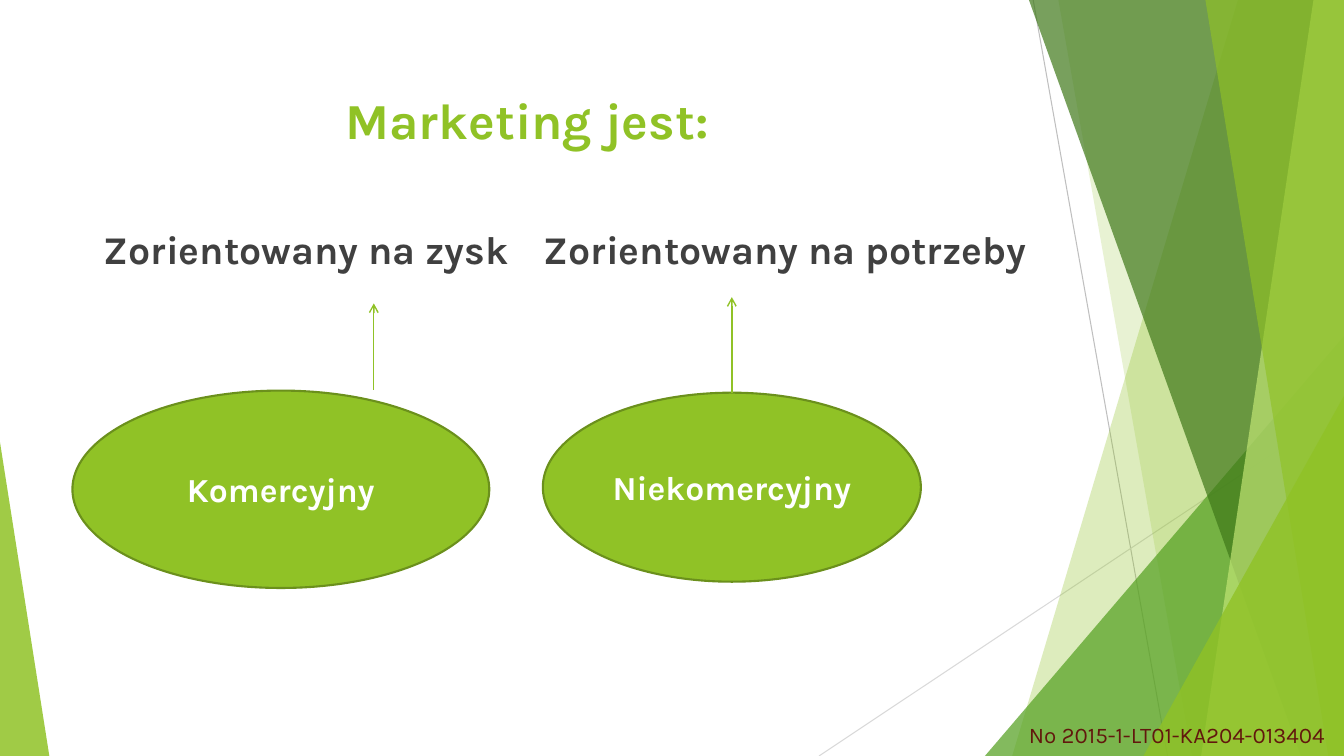
from lxml.etree import SubElement
from pptx import Presentation
from pptx.dml.color import RGBColor
from pptx.enum.shapes import MSO_CONNECTOR, MSO_SHAPE
from pptx.enum.text import MSO_ANCHOR, PP_ALIGN
from pptx.oxml.ns import qn
from pptx.util import Pt

EMU_PER_PX = 9525
WIDTH, HEIGHT = 1280, 720

WHITE = RGBColor(0xFF, 0xFF, 0xFF)
LIME = RGBColor(0x90, 0xC2, 0x26)
LIGHT_LIME = RGBColor(0xC0, 0xE4, 0x74)
GREEN = RGBColor(0x54, 0xA0, 0x21)
DARK_GREEN = RGBColor(0x3F, 0x78, 0x19)
OLIVE = RGBColor(0x6B, 0x90, 0x1C)
GREY = RGBColor(0xBF, 0xBF, 0xBF)
PALE_GREY = RGBColor(0xD9, 0xD9, 0xD9)
CHARCOAL = RGBColor(0x40, 0x40, 0x40)
MAROON = RGBColor(0x62, 0x17, 0x0D)


def px(*lengths):
    return [length * EMU_PER_PX for length in lengths]


class SlideBuilder:
    """Holds the style and the current slide."""

    font = "Karla"

    def __init__(self, page):
        self.page = page

    def paint(self, shape, color, opacity=100):
        shape.shadow.inherit = False
        shape.fill.solid()
        shape.fill.fore_color.rgb = color
        shape.line.fill.background()
        if opacity < 100:
            solid = shape._element.spPr.find(qn("a:solidFill"))
            SubElement(solid[0], qn("a:alpha"), val=str(opacity * 1000))

    def band(self, top_x, bottom_x, color, opacity):
        """Fills from a slanted left edge to the right side of the slide."""
        outline = self.page.shapes.build_freeform(top_x, 0, scale=EMU_PER_PX)
        outline.add_line_segments(
            [(WIDTH, 0), (WIDTH, HEIGHT), (bottom_x, HEIGHT)], close=True)
        self.paint(outline.convert_to_shape(), color, opacity)

    def corner(self, left, top, width, apex, color, opacity):
        """Triangle standing on the bottom edge of the slide."""
        shape = self.page.shapes.add_shape(
            MSO_SHAPE.ISOSCELES_TRIANGLE, *px(left, top, width, HEIGHT - top))
        shape.adjustments[0] = apex
        self.paint(shape, color, opacity)

    def line(self, start, end, color, weight, arrow=False):
        line = self.page.shapes.add_connector(
            MSO_CONNECTOR.STRAIGHT, *px(*start, *end))
        line.line.color.rgb = color
        line.line.width = Pt(weight)
        properties = line._element.spPr
        if arrow:
            SubElement(properties.find(qn("a:ln")), qn("a:tailEnd"), type="arrow")
        SubElement(properties, qn("a:effectLst"))
        return line

    def set_text(self, frame, text, size, color, bold, align):
        frame.text = text
        frame.vertical_anchor = MSO_ANCHOR.MIDDLE
        paragraph = frame.paragraphs[0]
        paragraph.alignment = align
        font = paragraph.runs[0].font
        font.name, font.size, font.bold = self.font, Pt(size), bold
        font.color.rgb = color

    def text(self, left, top, width, height, text, size, color,
             bold=True, align=PP_ALIGN.LEFT):
        box = self.page.shapes.add_textbox(*px(left, top, width, height))
        frame = box.text_frame
        frame.word_wrap = True
        frame.margin_left = frame.margin_right = 0
        frame.margin_top = frame.margin_bottom = 0
        self.set_text(frame, text, size, color, bold, align)

    def ellipse(self, left, top, width, height, text):
        shape = self.page.shapes.add_shape(
            MSO_SHAPE.OVAL, *px(left, top, width, height))
        self.paint(shape, LIME)
        shape.line.color.rgb = OLIVE
        shape.line.width = Pt(1.5)
        self.set_text(shape.text_frame, text, 24, WHITE, True, PP_ALIGN.CENTER)
        return shape


def main():
    deck = Presentation()
    deck.slide_width, deck.slide_height = px(WIDTH, HEIGHT)
    builder = SlideBuilder(deck.slides.add_slide(deck.slide_layouts[6]))

    # Background facets, from back to front
    builder.line((984, 0), (1112, HEIGHT), GREY, 0.75)
    builder.line((WIDTH, 387), (780, HEIGHT), PALE_GREY, 0.75)
    builder.band(1179, 964, LIME, 30)
    builder.band(1008, 1135, LIME, 20)
    builder.corner(938, 320, 342, 1, GREEN, 72)
    builder.band(980, 1239, DARK_GREEN, 70)
    builder.band(1251, 1144, LIGHT_LIME, 70)
    builder.band(1148, 1265, LIME, 65)
    builder.corner(1089, 377, 191, 1, LIME, 80)
    builder.corner(0, 421, 47, 0, LIME, 85)

    # Project number
    builder.text(980, 682, 296, 36, "No 2015-1-LT01-KA204-013404", 16, MAROON,
                 bold=False)

    # Title and the two orientations
    builder.text(195, 80, 614, 68, "Marketing jest:", 36, LIME,
                 align=PP_ALIGN.CENTER)
    builder.text(99, 213, 400, 48, "Zorientowany na zysk", 28, CHARCOAL)
    builder.text(518, 213, 500, 48, "Zorientowany na potrzeby", 28, CHARCOAL)

    # Kinds of marketing, each with an arrow to its orientation
    builder.ellipse(69, 372, 397, 188, "Komercyjny")
    noncommercial = builder.ellipse(517, 374, 360, 180, "Niekomercyjny")
    builder.line((356, 371), (356, 289), LIME, 1, arrow=True)
    arrow = builder.line((697, 374), (697, 283), LIME, 1, arrow=True)
    arrow.begin_connect(noncommercial, 0)

    deck.save("out.pptx")


if __name__ == "__main__":
    main()
